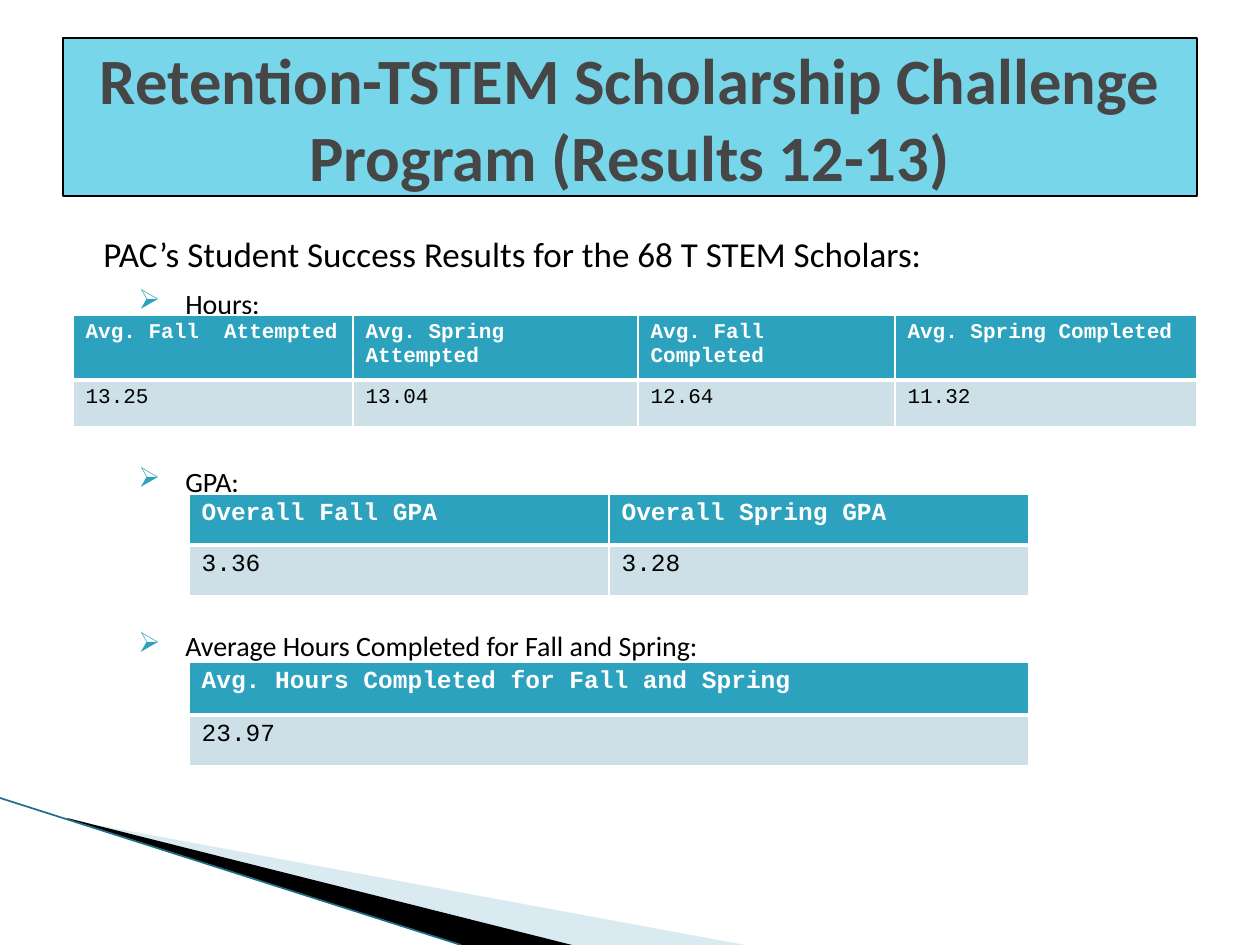
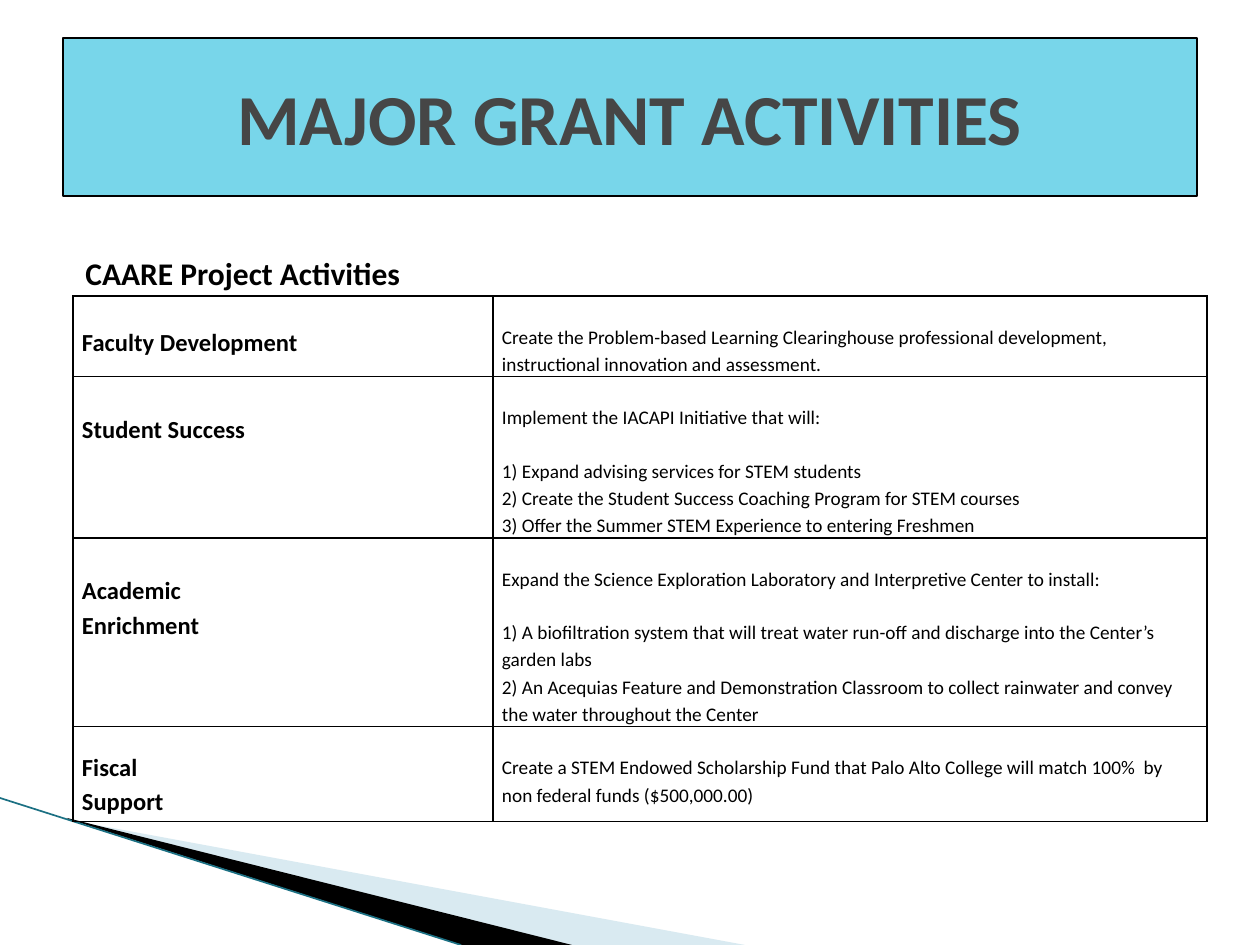
from dataclasses import dataclass

from lxml import etree
from pptx import Presentation
from pptx.dml.color import RGBColor
from pptx.enum.shapes import MSO_CONNECTOR, MSO_SHAPE
from pptx.enum.text import MSO_ANCHOR, PP_ALIGN
from pptx.oxml.ns import qn
from pptx.util import Pt

RECTANGLE = MSO_SHAPE.RECTANGLE
STRAIGHT = MSO_CONNECTOR.STRAIGHT
MIDDLE = MSO_ANCHOR.MIDDLE
TOP = MSO_ANCHOR.TOP
LEFT = PP_ALIGN.LEFT
CENTER = PP_ALIGN.CENTER
EMU_PER_PX = 914400 / 126
SLIDE_SIZE = (1260, 945)


@dataclass(frozen=True)
class Theme:
    black: str = "000000"
    white: str = "FFFFFF"
    title_fill: str = "78D6EA"
    title_text: str = "464646"
    accent: str = "2DA2BF"
    body_row: str = "CDE0E8"
    pale_wedge: str = "A0CBDC"
    edge: str = "1B7083"
    font: str = "Calibri"
    table_font: str = "Courier New"
    lead_size: int = 20
    bullet_size: int = 16
    heading_size: int = 18
    label_size: int = 14
    detail_size: int = 11


THEME = Theme()

TITLE_BOX = (63, 38, 1134, 158)
PALE_WEDGE = [(69, 820), (745, 945), (570, 945), (69, 819)]
BLACK_WEDGE = [(67, 818), (572, 945), (462, 945), (68, 819)]
EDGE_LINE = (0, 798, 461, 945)

RESULTS_TITLE = ("Retention-TSTEM Scholarship Challenge Program (Results 12-13)", 36.9)
RESULTS_BOX = (63, 210, 1134, 577)
RESULTS_LEAD = "PAC’s Student Success Results for the 68 T STEM Scholars:"
RESULTS_BULLETS = [
    ("Hours:", 3.2),
    ("GPA:", 78.5),
    ("Average Hours Completed for Fall and Spring:", 71),
]
RESULTS_TABLES = [
    {
        "origin": (73, 315),
        "columns": [280, 285, 257, 302],
        "rows": [65, 47],
        "size": 12,
        "cells": [
            ["Avg. Fall  Attempted", "Avg. Spring Attempted",
             "Avg. Fall Completed", "Avg. Spring Completed"],
            ["13.25", "13.04", "12.64", "11.32"],
        ],
    },
    {
        "origin": (189, 494),
        "columns": [420, 420],
        "rows": [51, 51],
        "size": 14,
        "cells": [["Overall Fall GPA", "Overall Spring GPA"], ["3.36", "3.28"]],
    },
    {
        "origin": (189, 662),
        "columns": [840],
        "rows": [53, 51],
        "size": 14,
        "cells": [["Avg. Hours Completed for Fall and Spring"], ["23.97"]],
    },
]

ACTIVITIES_TITLE = ("MAJOR GRANT ACTIVITIES", 41)
ACTIVITIES_HEADING = "CAARE Project Activities"
HEADING_BOX = (73, 248, 714, 50)
ACTIVITIES_ORIGIN = (73, 296)
ACTIVITIES_COLUMNS = [420, 714]
DETAIL_TOP = 26
STEP_GAP = 15
ACTIVITIES = [
    {
        "height": 79,
        "label_top": 28,
        "label": ["Faculty Development"],
        "detail": "Create the Problem-based Learning Clearinghouse professional "
                  "development, instructional innovation and assessment.",
        "steps": [],
    },
    {
        "height": 160,
        "label_top": 34,
        "label": ["Student Success"],
        "detail": "Implement the IACAPI Initiative that will:",
        "steps": [
            "1) Expand advising services for STEM students",
            "2) Create the Student Success Coaching Program for STEM courses",
            "3) Offer the Summer STEM Experience to entering Freshmen",
        ],
    },
    {
        "height": 187,
        "label_top": 34,
        "label": ["Academic", "Enrichment"],
        "detail": "Expand the Science Exploration Laboratory and Interpretive "
                  "Center to install:",
        "steps": [
            "1) A biofiltration system that will treat water run-off and discharge "
            "into the Center’s garden labs",
            "2) An Acequias Feature and Demonstration Classroom to collect rainwater "
            "and convey the water throughout the Center",
        ],
    },
    {
        "height": 95,
        "label_top": 22,
        "label": ["Fiscal", "Support"],
        "detail": "Create a STEM Endowed Scholarship Fund that Palo Alto College will "
                  "match 100%  by non federal funds ($500,000.00)",
        "steps": [],
    },
]


def px(length):
    return round(length * EMU_PER_PX)


def place(box):
    return [px(length) for length in box]


def color(value):
    return RGBColor.from_string(value)


def add_color(parent, value):
    etree.SubElement(parent, qn("a:srgbClr"), val=value)


def write_text(frame, text, *, size, font=THEME.font, ink=THEME.black, bold=False,
               align=LEFT, line_spacing=None, space_before=0, margin=0, hanging=0,
               bullet=None):
    paragraph = frame.paragraphs[0]
    if paragraph.runs:
        paragraph = frame.add_paragraph()
    properties = paragraph._p.get_or_add_pPr()
    properties.set("marL", str(px(margin)))
    properties.set("indent", str(-px(hanging)))
    if bullet:
        add_color(etree.SubElement(properties, qn("a:buClr")), THEME.accent)
        etree.SubElement(properties, qn("a:buChar"), char=bullet)
    paragraph.alignment = align
    paragraph.space_before = Pt(space_before)
    if line_spacing:
        paragraph.line_spacing = line_spacing
    run = paragraph.add_run()
    run.text = text
    run.font.name = font
    run.font.size = Pt(size)
    run.font.bold = bold
    run.font.color.rgb = color(ink)


def add_text_box(slide, box, margin_top=6):
    frame = slide.shapes.add_textbox(*place(box)).text_frame
    frame.word_wrap = True
    frame.margin_top = px(margin_top)
    return frame


def add_wedge(slide, points, fill, opacity=None):
    builder = slide.shapes.build_freeform(*points[0], scale=EMU_PER_PX)
    builder.add_line_segments(points[1:], close=True)
    shape = builder.convert_to_shape()
    shape.shadow.inherit = False
    shape.fill.solid()
    shape.fill.fore_color.rgb = color(fill)
    shape.line.fill.background()
    if opacity:
        swatch = shape._element.spPr.find(qn("a:solidFill")).find(qn("a:srgbClr"))
        etree.SubElement(swatch, qn("a:alpha"), val=str(opacity * 1000))


def add_decoration(slide):
    add_wedge(slide, PALE_WEDGE, THEME.pale_wedge, opacity=40)
    add_wedge(slide, BLACK_WEDGE, THEME.black)
    edge = slide.shapes.add_connector(STRAIGHT, *place(EDGE_LINE))
    edge.line.color.rgb = color(THEME.edge)
    edge.line.width = Pt(0.95)
    etree.SubElement(edge._element.spPr, qn("a:effectLst"))


def add_title(slide, text, size):
    shape = slide.shapes.add_shape(RECTANGLE, *place(TITLE_BOX))
    shape.shadow.inherit = False
    shape.fill.solid()
    shape.fill.fore_color.rgb = color(THEME.title_fill)
    shape.line.color.rgb = color(THEME.black)
    shape.line.width = Pt(0.75)
    frame = shape.text_frame
    frame.word_wrap = True
    frame.vertical_anchor = MIDDLE
    frame.margin_top = frame.margin_bottom = 0
    write_text(frame, text, size=size, ink=THEME.title_text, bold=True, align=CENTER)


def add_table(slide, origin, columns, rows):
    box = (*origin, sum(columns), sum(rows))
    table = slide.shapes.add_table(len(rows), len(columns), *place(box)).table
    table.first_row = False
    table.horz_banding = False
    for column, width in zip(table.columns, columns):
        column.width = px(width)
    for row, height in zip(table.rows, rows):
        row.height = px(height)
    return table


def style_cell(cell, border, fill=None, top=1, bottom=1):
    cell.vertical_anchor = TOP
    if fill:
        cell.fill.solid()
        cell.fill.fore_color.rgb = color(fill)
    else:
        cell.fill.background()
    properties = cell._tc.get_or_add_tcPr()
    widths = {"a:lnL": 1, "a:lnR": 1, "a:lnT": top, "a:lnB": bottom}
    for index, (tag, width) in enumerate(widths.items()):
        line = etree.Element(qn(tag), w=str(Pt(width)))
        add_color(etree.SubElement(line, qn("a:solidFill")), border)
        properties.insert(index, line)


def add_result_table(slide, content):
    table = add_table(slide, content["origin"], content["columns"], content["rows"])
    for row, texts in enumerate(content["cells"]):
        header = row == 0
        for column, text in enumerate(texts):
            cell = table.cell(row, column)
            style_cell(cell, THEME.white, THEME.accent if header else THEME.body_row,
                       top=1 if header else 3, bottom=3 if header else 1)
            write_text(cell.text_frame, text, size=content["size"], font=THEME.table_font,
                       ink=THEME.white if header else THEME.black, bold=header)


def add_activity_table(slide):
    table = add_table(slide, ACTIVITIES_ORIGIN, ACTIVITIES_COLUMNS,
                      [activity["height"] for activity in ACTIVITIES])
    for row, activity in enumerate(ACTIVITIES):
        label, detail = table.cell(row, 0), table.cell(row, 1)
        for cell, top in ((label, activity["label_top"]), (detail, DETAIL_TOP)):
            style_cell(cell, THEME.black)
            cell.margin_left = cell.margin_right = px(9)
            cell.margin_top, cell.margin_bottom = px(top), 0
        for text in activity["label"]:
            write_text(label.text_frame, text, size=THEME.label_size, bold=True,
                       line_spacing=1.15)
        for index, text in enumerate([activity["detail"], *activity["steps"]]):
            write_text(detail.text_frame, text, size=THEME.detail_size, line_spacing=1.15,
                       space_before=STEP_GAP if index == 1 else 0)


def build_results(slide):
    add_decoration(slide)
    frame = add_text_box(slide, RESULTS_BOX, margin_top=14)
    write_text(frame, RESULTS_LEAD, size=THEME.lead_size, line_spacing=1.2, margin=28)
    for text, gap in RESULTS_BULLETS:
        write_text(frame, text, size=THEME.bullet_size, line_spacing=1.2,
                   space_before=gap, margin=110, hanging=47, bullet="➢")
    add_title(slide, *RESULTS_TITLE)
    for content in RESULTS_TABLES:
        add_result_table(slide, content)


def build_activities(slide):
    add_decoration(slide)
    add_activity_table(slide)
    add_title(slide, *ACTIVITIES_TITLE)
    frame = add_text_box(slide, HEADING_BOX)
    write_text(frame, ACTIVITIES_HEADING, size=THEME.heading_size, bold=True)


def main():
    presentation = Presentation()
    presentation.slide_width, presentation.slide_height = place(SLIDE_SIZE)
    blank = presentation.slide_layouts[6]
    for build in (build_results, build_activities):
        build(presentation.slides.add_slide(blank))
    presentation.save("out.pptx")


if __name__ == "__main__":
    main()
